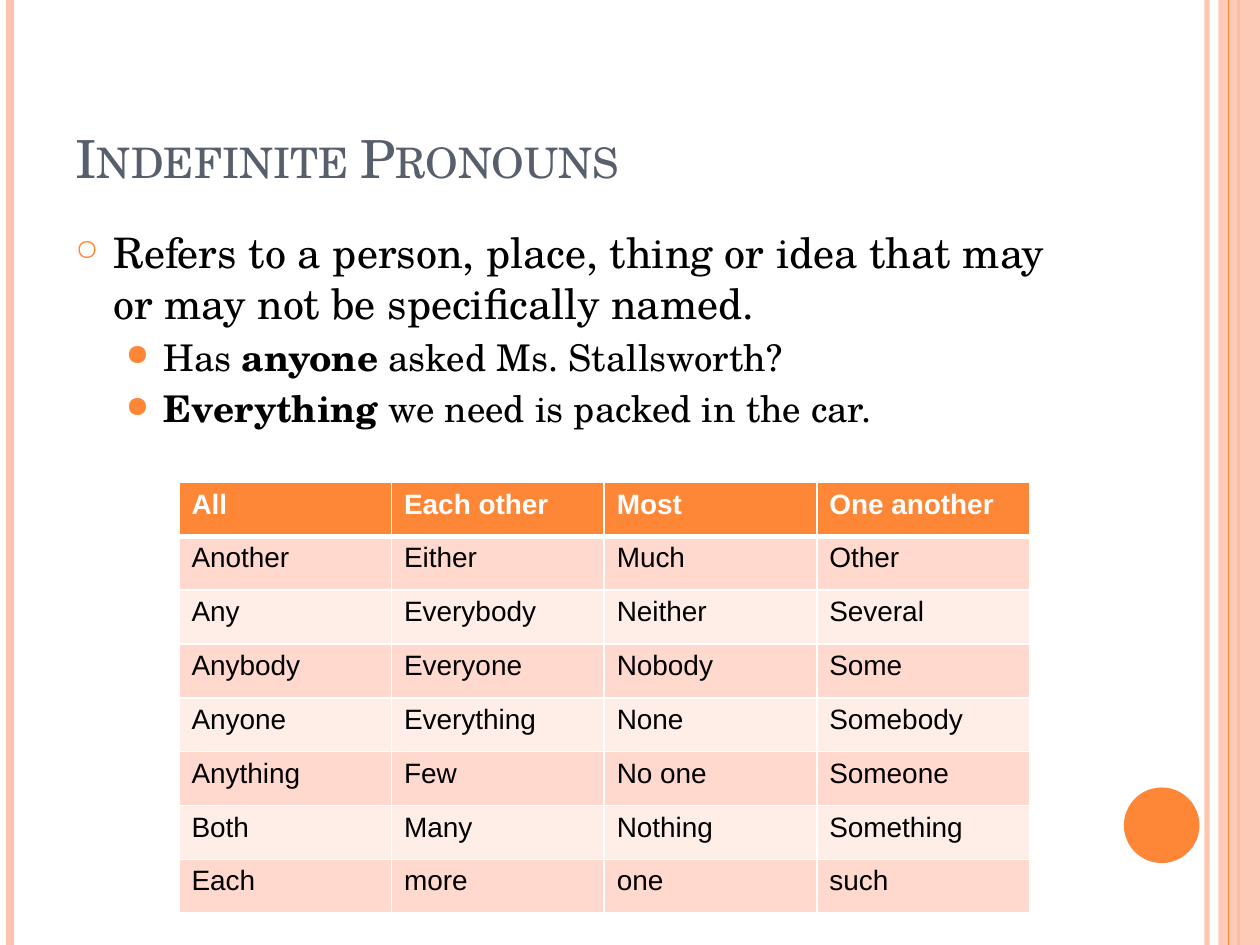
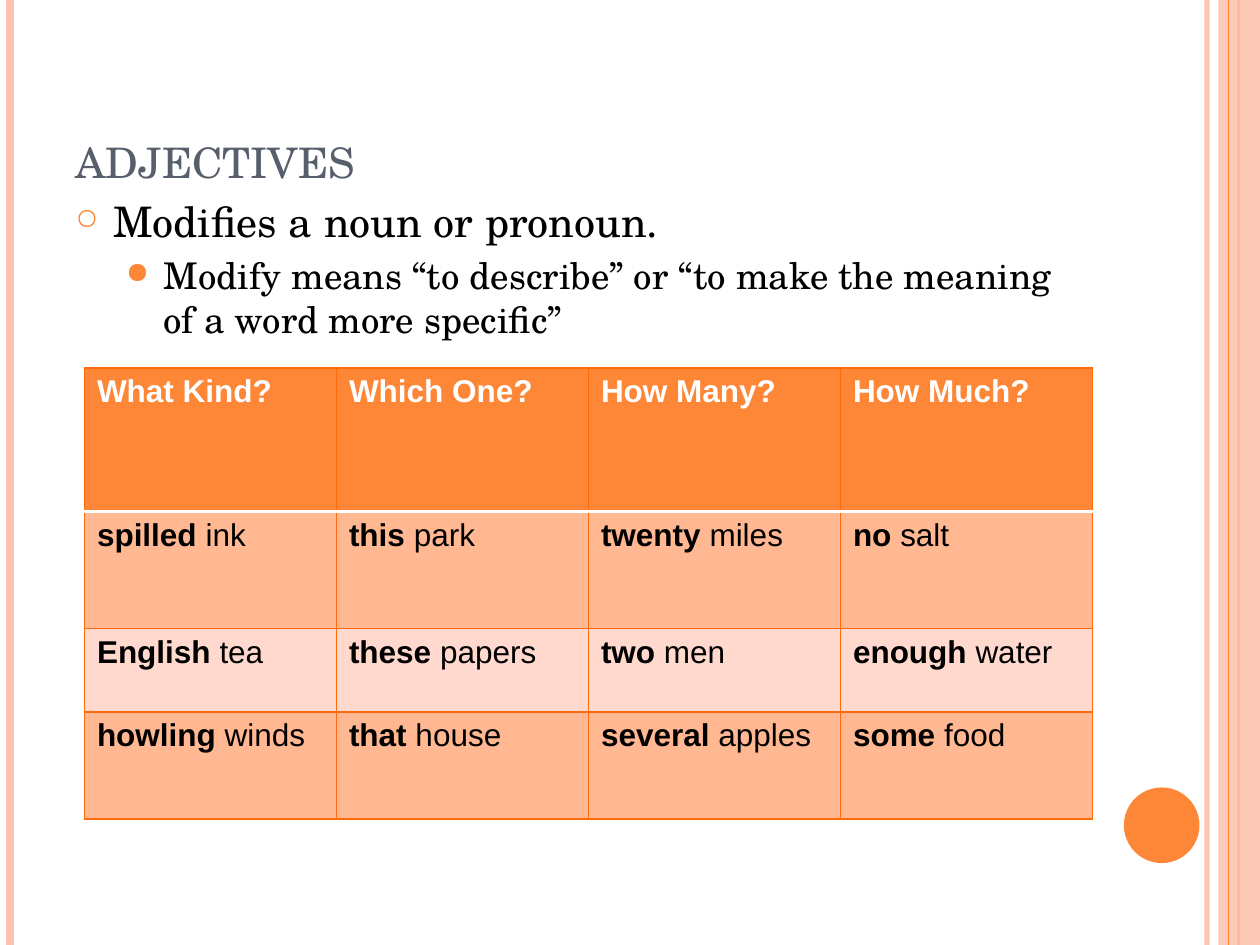
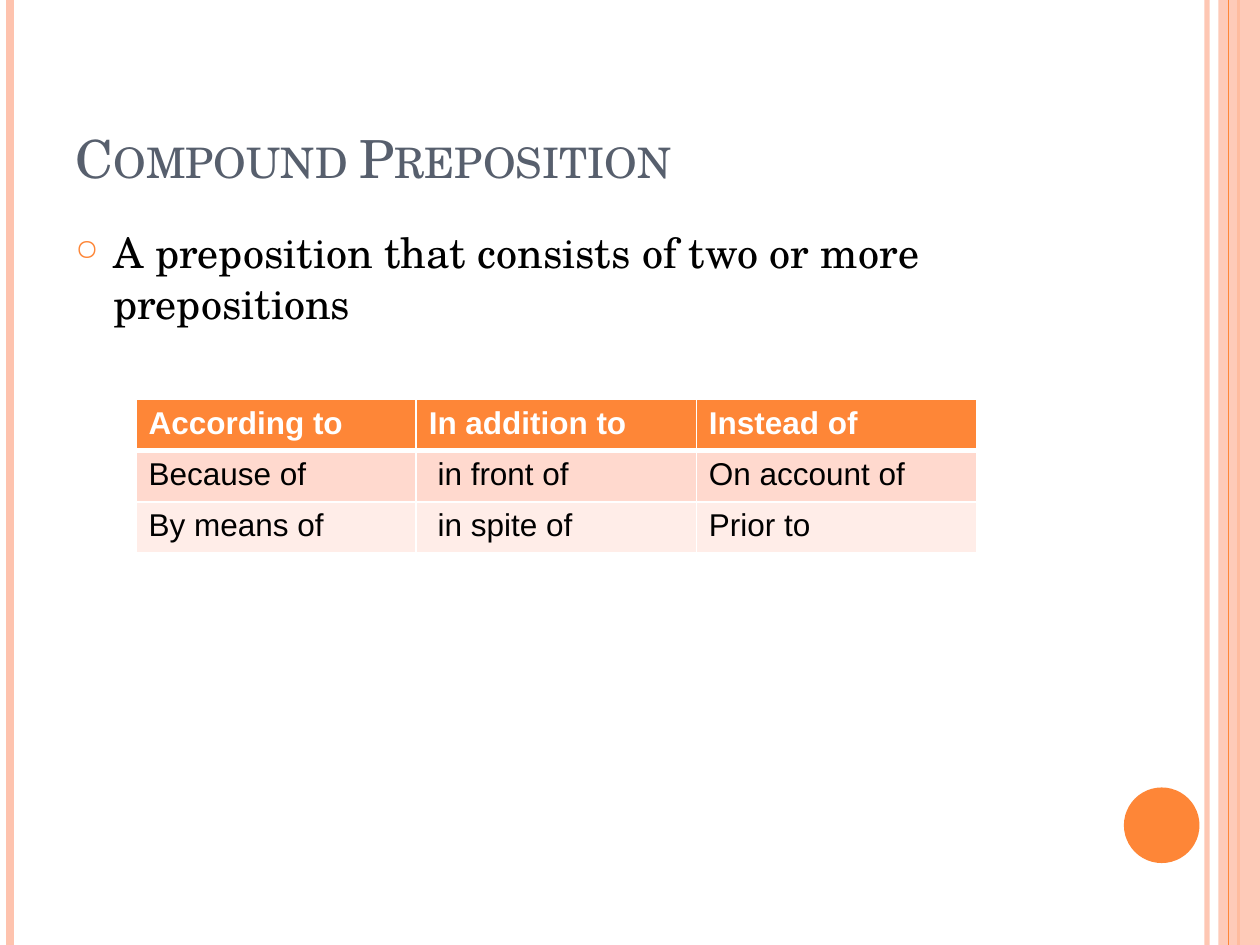
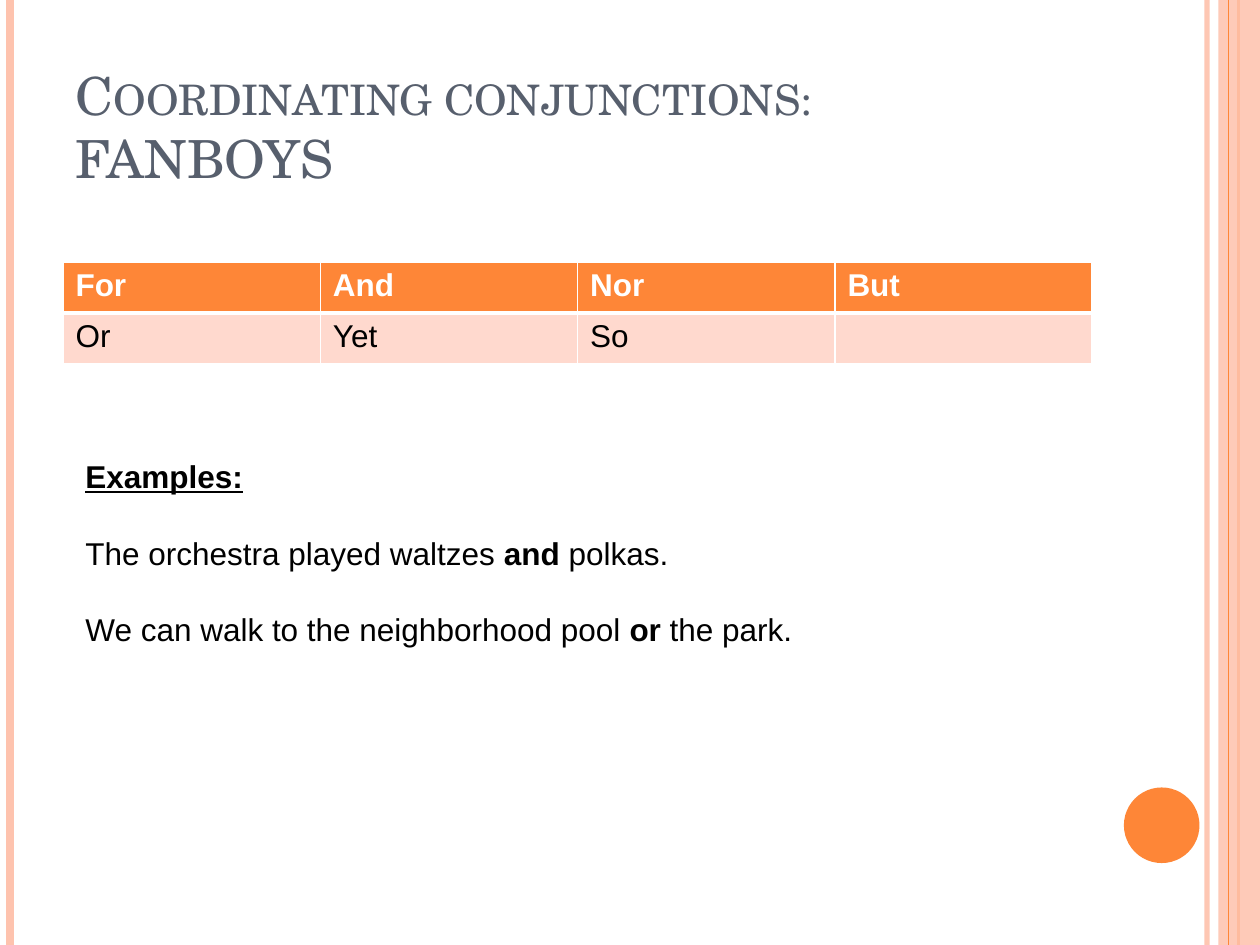
from dataclasses import dataclass

from lxml.etree import SubElement
from pptx import Presentation
from pptx.dml.color import RGBColor
from pptx.enum.shapes import MSO_CONNECTOR, MSO_SHAPE
from pptx.enum.text import MSO_ANCHOR, PP_ALIGN
from pptx.oxml.ns import qn
from pptx.util import Pt

PX = 9144  # EMU per px, 100 px to the inch
SLIDE_WIDTH, SLIDE_HEIGHT = 1000, 750
TITLE_ONLY = 5


@dataclass(frozen=True)
class Theme:
    orange: str = "FE8637"
    deep_orange: str = "FF6B0A"
    peach: str = "FEC3AE"
    band: str = "FFD9CE"
    pale_band: str = "FFEDE8"
    strong_band: str = "FFB892"
    slate: str = "575F6D"
    black: str = "000000"
    white: str = "FFFFFF"
    serif: str = "TeX Gyre Schola"
    sans: str = "Arial"
    title_size: int = 30
    body_size: int = 24
    sub_size: int = 21
    text_size: int = 18
    small_size: int = 16


THEME = Theme()


@dataclass(frozen=True)
class TableStyle:
    bands: tuple = (THEME.band, THEME.pale_band)
    border: str = THEME.white
    header_rule: int = 3
    size: int = THEME.text_size


@dataclass(frozen=True)
class BulletLevel:
    symbol: str
    scale: int
    margin: int
    size: int
    space_before: float


BULLET_LEVELS = (
    BulletLevel("○", 70, 30, THEME.body_size, 6),
    BulletLevel("●", 80, 70, THEME.sub_size, 4.2),
)
HANGING = 30


def px(*lengths):
    return [length * PX for length in lengths]


def color(value):
    return RGBColor.from_string(value)


def set_opacity(element, percent):
    for color_element in element.iter(qn("a:srgbClr")):
        SubElement(color_element, qn("a:alpha"), val=str(percent * 1000))


class Deck:
    def __init__(self, theme):
        self.theme = theme
        self.presentation = Presentation()
        self.presentation.slide_width, self.presentation.slide_height = px(SLIDE_WIDTH, SLIDE_HEIGHT)
        self.slide = None

    def new_slide(self, title):
        layout = self.presentation.slide_layouts[TITLE_ONLY]
        self.slide = self.presentation.slides.add_slide(layout)
        self.frame()
        self.title(title)

    # Shared side bands and disc
    def frame(self):
        theme = self.theme
        self.vertical_line(958, theme.peach, 3, opacity=93)
        self.vertical_line(8, theme.peach, 4.5)
        self.vertical_line(983, theme.orange, 1.5)
        self.shape(MSO_SHAPE.RECTANGLE, (967, 0, 33, SLIDE_HEIGHT), theme.peach, opacity=87)
        self.vertical_line(975, theme.orange, 0.75)
        self.shape(MSO_SHAPE.OVAL, (892, 625, 60, 60), theme.orange)

    def vertical_line(self, x, line_color, width, opacity=100):
        line = self.slide.shapes.add_connector(MSO_CONNECTOR.STRAIGHT, *px(x, 0, x, SLIDE_HEIGHT))
        line.line.color.rgb = color(line_color)
        line.line.width = Pt(width)
        properties = line._element.spPr
        if opacity < 100:
            set_opacity(properties, opacity)
        SubElement(properties, qn("a:effectLst"))

    def shape(self, kind, box, fill_color, opacity=100):
        shape = self.slide.shapes.add_shape(kind, *px(*box))
        shape.shadow.inherit = False
        shape.fill.solid()
        shape.fill.fore_color.rgb = color(fill_color)
        shape.line.fill.background()
        if opacity < 100:
            set_opacity(shape._element.spPr, opacity)

    # Text
    def format_run(self, run, font_name, size, text_color, bold=False):
        run.font.name = font_name
        run.font.size = Pt(size)
        run.font.color.rgb = color(text_color)
        run.font.bold = bold

    def rich_text(self, paragraph, text, font_name, size, text_color):
        """Write text in which *asterisks* enclose the bold parts."""
        for index, part in enumerate(text.split("*")):
            if part:
                run = paragraph.add_run()
                run.text = part
                self.format_run(run, font_name, size, text_color, bold=index % 2 == 1)

    def title(self, text):
        title = self.slide.shapes.title
        title.left, title.top, title.width, title.height = px(50, 30, 817, 125)
        title.text_frame.text = text
        title.text_frame.vertical_anchor = MSO_ANCHOR.BOTTOM
        paragraph = title.text_frame.paragraphs[0]
        paragraph.alignment = PP_ALIGN.LEFT
        for run in paragraph.runs:
            self.format_run(run, self.theme.serif, self.theme.title_size, self.theme.slate)
            run._r.get_or_add_rPr().set("cap", "small")

    def paragraphs(self, box, count):
        text_frame = self.slide.shapes.add_textbox(*px(*box)).text_frame
        text_frame.word_wrap = True
        for _ in range(count - 1):
            text_frame.add_paragraph()
        return text_frame.paragraphs

    def bullets(self, top, items):
        paragraphs = self.paragraphs((50, top, 817, 708 - top), len(items))
        for paragraph, (level_index, text) in zip(paragraphs, items):
            level = BULLET_LEVELS[level_index]
            paragraph.level = level_index
            paragraph.space_before = Pt(level.space_before)
            self.rich_text(paragraph, text, self.theme.serif, level.size, self.theme.black)
            properties = paragraph._p.get_or_add_pPr()
            properties.set("marL", str(level.margin * PX))
            properties.set("indent", str(-HANGING * PX))
            bullet_color = SubElement(properties, qn("a:buClr"))
            SubElement(bullet_color, qn("a:srgbClr"), val=self.theme.orange)
            SubElement(properties, qn("a:buSzPct"), val=str(level.scale * 1000))
            SubElement(properties, qn("a:buChar"), char=level.symbol)

    def examples(self, box, heading, sentences):
        paragraphs = self.paragraphs(box, len(sentences) + 1)
        for paragraph, text in zip(paragraphs, (f"*{heading}*", *sentences)):
            self.rich_text(paragraph, text, self.theme.sans, self.theme.text_size, self.theme.black)
        for paragraph in paragraphs[1:]:
            paragraph.space_before = Pt(22)
        paragraphs[0].runs[0].font.underline = True

    # Tables
    def table(self, box, rows, style=TableStyle(), row_heights=()):
        theme = self.theme
        table = self.slide.shapes.add_table(len(rows), len(rows[0]), *px(*box)).table
        for row, height in zip(table.rows, row_heights):
            row.height = height * PX
        for row_index, texts in enumerate(rows):
            is_header = row_index == 0
            fill_color = theme.orange if is_header else style.bands[(row_index - 1) % 2]
            for column_index, text in enumerate(texts):
                cell = table.cell(row_index, column_index)
                cell.fill.solid()
                cell.fill.fore_color.rgb = color(fill_color)
                self.rich_text(
                    cell.text_frame.paragraphs[0],
                    f"*{text}*" if is_header else text,
                    theme.sans,
                    style.size,
                    theme.white if is_header else theme.black,
                )
                self.cell_borders(cell, row_index, style)

    def cell_borders(self, cell, row_index, style):
        edge, rule = (style.border, 1), (self.theme.white, style.header_rule)
        borders = {
            "lnL": edge,
            "lnR": edge,
            "lnT": rule if row_index == 1 else edge,
            "lnB": rule if row_index == 0 else edge,
        }
        properties = cell._tc.get_or_add_tcPr()
        for position, (side, (line_color, width)) in enumerate(borders.items()):
            line = SubElement(properties, qn(f"a:{side}"), w=str(Pt(width)))
            fill = SubElement(line, qn("a:solidFill"))
            SubElement(fill, qn("a:srgbClr"), val=line_color)
            properties.insert(position, line)


def main():
    deck = Deck(THEME)

    # Indefinite pronouns
    deck.new_slide("Indefinite Pronouns")
    deck.bullets(175, [
        (0, "Refers to a person, place, thing or idea that may or may not be specifically named."),
        (1, "Has *anyone* asked Ms. Stallsworth?"),
        (1, "*Everything* we need is packed in the car."),
    ])
    pronouns = [
        ("All", "Each other", "Most", "One another"),
        ("Another", "Either", "Much", "Other"),
        ("Any", "Everybody", "Neither", "Several"),
        ("Anybody", "Everyone", "Nobody", "Some"),
        ("Anyone", "Everything", "None", "Somebody"),
        ("Anything", "Few", "No one", "Someone"),
        ("Both", "Many", "Nothing", "Something"),
        ("Each", "more", "one", "such"),
    ]
    deck.table((142, 383, 675, 342), pronouns, TableStyle(size=THEME.small_size))

    # Adjectives
    deck.new_slide("adjectives")
    deck.bullets(150, [
        (0, "Modifies a noun or pronoun."),
        (1, "Modify means “to describe” or “to make the meaning of a word more specific”"),
    ])
    adjectives = [
        ("What Kind?", "Which One?", "How Many?", "How Much?"),
        ("*spilled *ink", "*this *park", "*twenty* miles", "*no *salt"),
        ("*English* tea", "*these *papers", "*two* men", "*enough* water"),
        ("*howling* winds", "*that* house", "*several* apples", "*some* food"),
    ]
    grid_style = TableStyle((THEME.strong_band, THEME.band), THEME.deep_orange, 2)
    deck.table((67, 292, 800, 358), adjectives, grid_style, row_heights=(114, 93, 66, 85))

    # Compound prepositions
    deck.new_slide("Compound Preposition")
    deck.bullets(175, [(0, "A preposition that consists of two or more prepositions")])
    prepositions = [
        ("According to", "In addition to", "Instead of"),
        ("Because of", " in front of", "On account of"),
        ("By means of", " in spite of", "Prior to"),
    ]
    deck.table((108, 317, 667, 122), prepositions)

    # Coordinating conjunctions
    deck.new_slide("Coordinating conjunctions:\vFANBOYS")
    deck.table((50, 208, 817, 81), [("For", "And", "Nor", "But"), ("Or", "Yet", "So", "")])
    deck.examples((58, 358, 808, 222), "Examples:", (
        "The orchestra played waltzes *and* polkas.",
        "We can walk to the neighborhood pool *or* the park.",
    ))

    deck.presentation.save("out.pptx")


if __name__ == "__main__":
    main()
